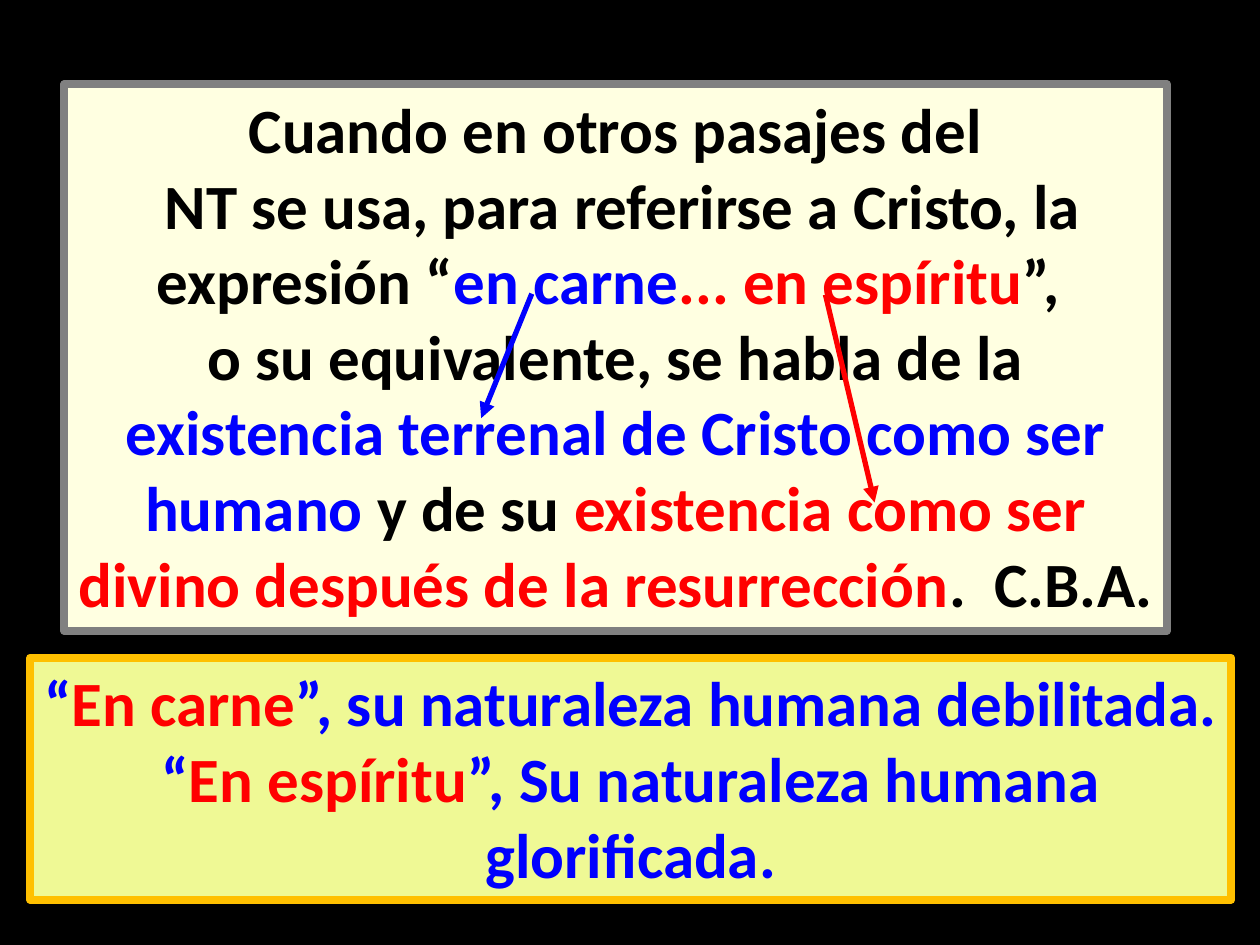
from dataclasses import dataclass

from lxml import etree
from pptx import Presentation
from pptx.dml.color import RGBColor
from pptx.enum import shapes, text
from pptx.oxml import ns, parse_xml
from pptx.util import Cm, Pt


@dataclass(frozen=True)
class Theme:
    background: str = "000000"
    ink: str = "000000"
    flesh: str = "0000FE"
    spirit: str = "FF0000"
    quote_fill: str = "FFFFE1"
    quote_border: str = "808080"
    summary_fill: str = "EFF995"
    summary_border: str = "FFC000"
    font: str = "Calibri"
    size: int = 36
    border: float = 4.5
    arrow: float = 3


theme = Theme()
rgb = RGBColor.from_string


def add_panel(slide, box, fill, border, paragraphs):
    """Add a bordered rectangle with centred paragraphs of coloured runs."""
    panel = slide.shapes.add_shape(shapes.MSO_SHAPE.RECTANGLE, *map(Cm, box))
    panel.shadow.inherit = False
    panel.fill.solid()
    panel.fill.fore_color.rgb = rgb(fill)
    panel.line.color.rgb = rgb(border)
    panel.line.width = Pt(theme.border)
    frame = panel.text_frame
    frame.word_wrap = True
    frame.auto_size = text.MSO_AUTO_SIZE.SHAPE_TO_FIT_TEXT
    frame.vertical_anchor = text.MSO_ANCHOR.TOP
    for index, pieces in enumerate(paragraphs):
        paragraph = frame.paragraphs[0] if index == 0 else frame.add_paragraph()
        paragraph.alignment = text.PP_ALIGN.CENTER
        for wording, color in pieces:
            run = paragraph.add_run()
            run.text = wording
            run.font.name = theme.font
            run.font.size = Pt(theme.size)
            run.font.bold = True
            run.font.color.rgb = rgb(color)
            # Thin outline in the colour of the letters
            outline = parse_xml(
                f'<a:ln {ns.nsdecls("a")} w="9525"><a:solidFill>'
                f'<a:srgbClr val="{color}"/></a:solidFill></a:ln>')
            run.font._element.insert(0, outline)
    return panel


presentation = Presentation()
presentation.slide_width = Cm(25.4)
presentation.slide_height = Cm(19.05)
slide = presentation.slides.add_slide(presentation.slide_layouts[6])
slide.background.fill.solid()
slide.background.fill.fore_color.rgb = rgb(theme.background)

# Quotation
quote = add_panel(
    slide, (1.3, 1.7, 22.22, 11.02), theme.quote_fill, theme.quote_border,
    [
        [("Cuando en otros pasajes del", theme.ink)],
        [(" NT se usa, para referirse a Cristo, la expresión “", theme.ink),
         ("en carne", theme.flesh),
         ("... en espíritu", theme.spirit),
         ("”, ", theme.ink)],
        [("o su equivalente, se habla de la ", theme.ink),
         ("existencia terrenal de Cristo como ser humano ", theme.flesh),
         ("y de su ", theme.ink),
         ("existencia como ser divino después de la resurrección", theme.spirit),
         (".  C.B.A.", theme.ink)],
    ])

# Soft shadow under the quotation
effects = quote._element.spPr.find(ns.qn("a:effectLst"))
effects.append(parse_xml(
    f'<a:outerShdw {ns.nsdecls("a")} blurRad="40000" dist="20000" dir="5400000" '
    'rotWithShape="0"><a:srgbClr val="000000"><a:alpha val="38000"/>'
    '</a:srgbClr></a:outerShdw>'))

# Arrows from each expression to its meaning
for ends, color in [((10.72, 5.92, 9.7, 8.43), theme.flesh),
                    ((16.64, 5.94, 17.63, 10.13), theme.spirit)]:
    arrow = slide.shapes.add_connector(
        shapes.MSO_CONNECTOR.STRAIGHT, *map(Cm, ends))
    arrow.line.color.rgb = rgb(color)
    arrow.line.width = Pt(theme.arrow)
    etree.SubElement(arrow.line._get_or_add_ln(), ns.qn("a:tailEnd"), type="triangle")
    etree.SubElement(arrow._element.spPr, ns.qn("a:effectLst"))

# Summary
add_panel(
    slide, (0.61, 13.26, 24.21, 4.88), theme.summary_fill, theme.summary_border,
    [
        [("“", theme.flesh), ("En carne", theme.spirit),
         ("”, su naturaleza humana debilitada.", theme.flesh)],
        [("“", theme.flesh), ("En espíritu", theme.spirit),
         ("”, Su naturaleza humana glorificada.", theme.flesh)],
    ])

presentation.save("out.pptx")
